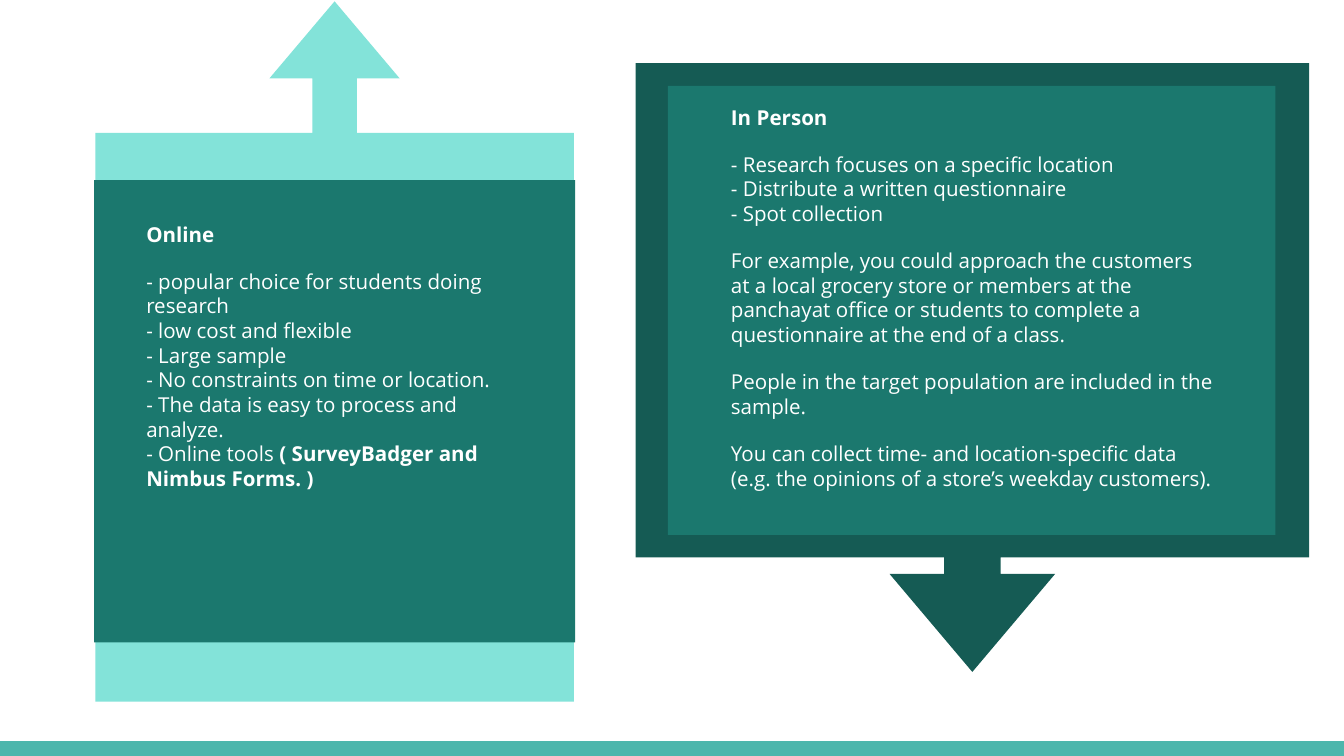
from lxml.etree import SubElement
from pptx import Presentation
from pptx.dml.color import RGBColor
from pptx.enum.shapes import MSO_SHAPE as Preset
from pptx.oxml.ns import qn
from pptx.util import Inches, Pt

FONT = "Open Sans"
FONT_SIZE = 11
BLOCK_GAP = Pt(12)
SLIDE_WIDTH = 10
SLIDE_HEIGHT = SLIDE_WIDTH * 9 / 16
BAR_HEIGHT = 0.11
WHITE = RGBColor(0xFF, 0xFF, 0xFF)
BAR_TEAL = RGBColor(0x4D, 0xB6, 0xAC)
MINT = RGBColor(0x83, 0xE3, 0xD9)
PANEL_TEAL = RGBColor(0x1B, 0x78, 0x6E)
DARK_TEAL = RGBColor(0x15, 0x5B, 0x54)

# Shaft width, half head width, head length, body share of the callout
ARROW_PROPORTIONS = (0.093, 0.136, 0.161, 0.812)

# Boxes are left, top, width, height in inches.
# A block is one paragraph: a list of lines, each a list of (text, bold) runs.
METHODS = [
    {
        "arrow": Preset.UP_ARROW_CALLOUT,
        "arrow_color": MINT,
        "arrow_box": (0.71, 0.01, 3.56, 5.21),
        "panel_box": (0.7, 1.34, 3.58, 3.44),
        "text_box": (0.99, 1.55, 3, 2.3),
        "blocks": [
            [[("Online", True)]],
            [
                [("- popular choice for students doing research", False)],
                [("- low cost and flexible", False)],
                [("- Large sample ", False)],
                [("- No constraints on time or location. ", False)],
                [("- The data is easy to process and analyze. ", False)],
                [("- Online tools", False),
                 (" ( SurveyBadger and Nimbus Forms. )", True)],
            ],
        ],
    },
    {
        "arrow": Preset.DOWN_ARROW_CALLOUT,
        "arrow_color": DARK_TEAL,
        "arrow_box": (4.73, 0.47, 5.01, 4.53),
        "panel_box": (4.97, 0.64, 4.52, 3.34),
        "text_box": (5.34, 0.68, 3.79, 3.34),
        "blocks": [
            [[("In Person", True)]],
            [
                [("- Research focuses on a specific location", False)],
                [("- Distribute a written questionnaire ", False)],
                [("- Spot collection", False)],
            ],
            [[("For example, you could approach the customers at a local "
               "grocery store or members at the panchayat office or students "
               "to complete a questionnaire at the end of a class.", False)]],
            [[("People in the target population are included in the sample.",
               False)]],
            [[("You can collect time- and location-specific data (e.g. the "
               "opinions of a store’s weekday customers).", False)]],
        ],
    },
]


def add_filled(slide, preset, box, color):
    shape = slide.shapes.add_shape(preset, *map(Inches, box))
    shape.fill.solid()
    shape.fill.fore_color.rgb = color
    shape.line.fill.background()
    shape.shadow.inherit = False
    return shape


def add_sized_break(paragraph):
    """Add a line break that keeps the line height of the text around it."""
    line_break = SubElement(paragraph._p, qn("a:br"))
    properties = SubElement(line_break, qn("a:rPr"), sz=str(FONT_SIZE * 100))
    SubElement(properties, qn("a:latin"), typeface=FONT)


def add_description(slide, box, blocks):
    frame = slide.shapes.add_textbox(*map(Inches, box)).text_frame
    frame.word_wrap = True
    frame.margin_left = frame.margin_right = Inches(0.1)
    frame.margin_top = frame.margin_bottom = Inches(0.1)
    for block_index, block in enumerate(blocks):
        paragraph = frame.add_paragraph() if block_index else frame.paragraphs[0]
        paragraph.space_before = BLOCK_GAP if block_index else Pt(0)
        for line_index, line in enumerate(block):
            if line_index:
                add_sized_break(paragraph)
            for text, bold in line:
                run = paragraph.add_run()
                run.text = text
                run.font.name = FONT
                run.font.size = Pt(FONT_SIZE)
                run.font.bold = bold
                run.font.color.rgb = WHITE


def main():
    prs = Presentation()
    prs.slide_width = Inches(SLIDE_WIDTH)
    prs.slide_height = Inches(SLIDE_HEIGHT)
    slide = prs.slides.add_slide(prs.slide_layouts[6])

    bar_box = (0, SLIDE_HEIGHT - BAR_HEIGHT, SLIDE_WIDTH, BAR_HEIGHT)
    add_filled(slide, Preset.RECTANGLE, bar_box, BAR_TEAL)
    for method in METHODS:
        callout = add_filled(slide, method["arrow"], method["arrow_box"],
                             method["arrow_color"])
        for index, proportion in enumerate(ARROW_PROPORTIONS):
            callout.adjustments[index] = proportion
        add_filled(slide, Preset.RECTANGLE, method["panel_box"], PANEL_TEAL)
        add_description(slide, method["text_box"], method["blocks"])

    prs.save("out.pptx")


if __name__ == "__main__":
    main()
